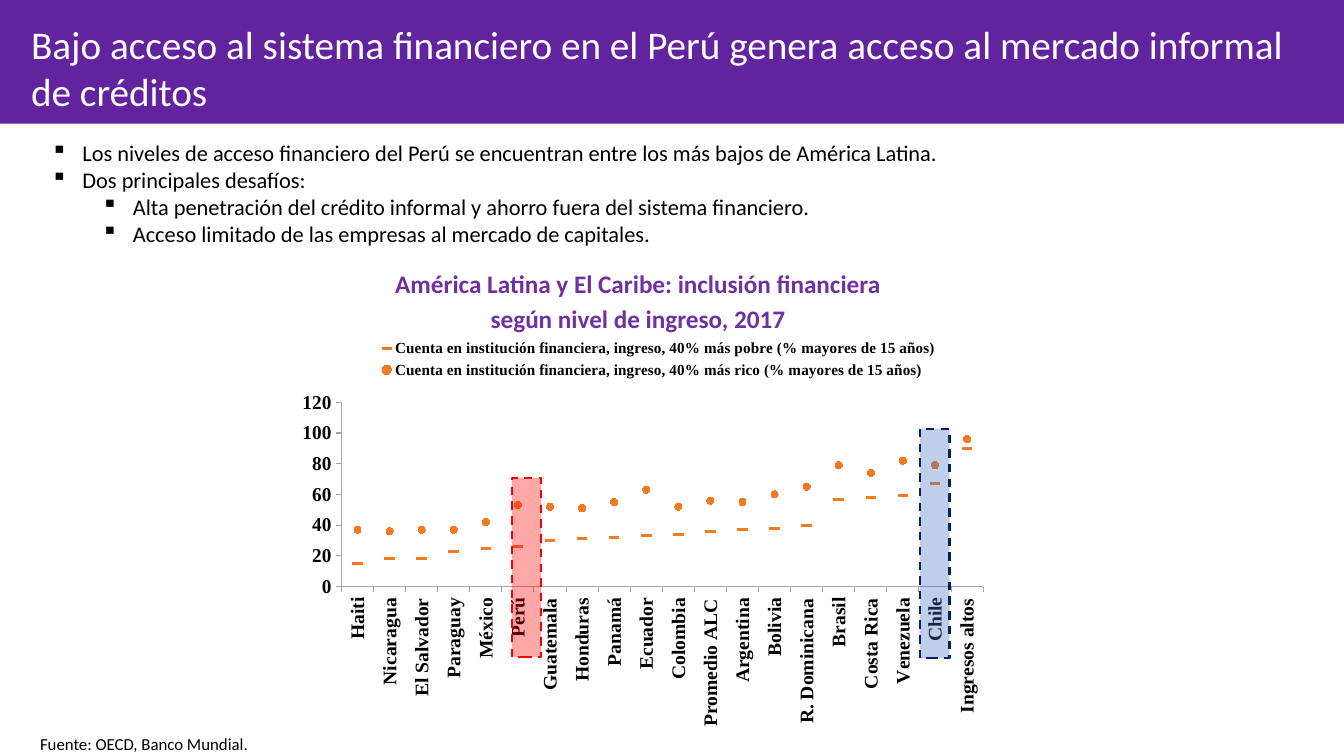
"""Build the slide on access to the financial system in Peru."""
from dataclasses import dataclass

import pptx
import pptx.chart.data
import pptx.dml.color
import pptx.enum.chart
import pptx.enum.dml
import pptx.enum.shapes
import pptx.enum.text
import pptx.oxml
import pptx.oxml.ns
import pptx.util

Cm = pptx.util.Cm
Pt = pptx.util.Pt
RGB = pptx.dml.color.RGBColor
Align = pptx.enum.text.PP_ALIGN
Mark = pptx.enum.chart.XL_MARKER_STYLE
qn = pptx.oxml.ns.qn

PURPLE = RGB(0x62, 0x23, 0x9F)
VIOLET = RGB(0x70, 0x30, 0xA0)
WHITE = RGB(0xFF, 0xFF, 0xFF)
BLACK = RGB(0, 0, 0)
GRAY = RGB(0xA6, 0xA6, 0xA6)
ORANGE = RGB(0xF4, 0x79, 0x20)
RED = RGB(0xFF, 0, 0)
BLUE = RGB(0x44, 0x72, 0xC4)
NAVY = RGB(0, 0x20, 0x60)
SANS = "Calibri"
SERIF = "Times New Roman"


@dataclass
class Box:
    left: float
    top: float
    width: float
    height: float

    def cm(self) -> tuple:
        return Cm(self.left), Cm(self.top), Cm(self.width), Cm(self.height)


@dataclass
class Label:
    text: str
    box: Box
    size: int
    color: RGB
    bold: bool
    align: Align
    spacing: float


@dataclass
class Point:
    text: str
    level: int


@dataclass
class Series:
    name: str
    values: tuple
    style: Mark
    size: int


@dataclass
class Focus:
    box: Box
    fill: RGB
    line: RGB


POINTS = (
    Point("Los niveles de acceso financiero del Perú se encuentran entre los más bajos de América Latina.", 0),
    Point("Dos principales desafíos:", 0),
    Point("Alta penetración del crédito informal y ahorro fuera del sistema financiero.", 1),
    Point("Acceso limitado de las empresas al mercado de capitales.", 1),
)
LABELS = (
    Label("Fuente: OECD, Banco Mundial.", Box(0.76, 18.11, 16.94, 0.94), 12, BLACK, False, Align.JUSTIFY, 1.5),
    Label("América Latina y El Caribe: inclusión financiera según nivel de ingreso, 2017",
          Box(8.97, 6.53, 14.22, 1.98), 18, VIOLET, True, Align.CENTER, 1.15),
)
LANDS = ("Haiti", "Nicaragua", "El Salvador", "Paraguay", "México", "Perú", "Guatemala",
         "Honduras", "Panamá", "Ecuador", "Colombia", "Promedio ALC", "Argentina", "Bolivia",
         "R. Dominicana", "Brasil", "Costa Rica", "Venezuela", "Chile", "Ingresos altos")
SERIES = (
    Series("Cuenta en institución financiera, ingreso, 40% más pobre (% mayores de 15 años)",
           (15, 18, 18, 23, 25, 26, 30, 31, 32, 33, 34, 36, 37, 38, 40, 57, 58, 59, 67, 90), Mark.DASH, 7),
    Series("Cuenta en institución financiera, ingreso, 40% más rico (% mayores de 15 años)",
           (37, 36, 37, 37, 42, 53, 52, 51, 55, 63, 52, 56, 55, 60, 65, 79, 74, 82, 79, 96), Mark.CIRCLE, 5),
)
FOCI = (
    Focus(Box(12.9, 12.04, 0.74, 4.52), RED, RED),
    Focus(Box(23.19, 10.8, 0.74, 5.79), BLUE, NAVY),
)


def style(font, name: str, size: int, color: RGB, bold: bool) -> None:
    """Set the look of a font."""
    font.name, font.size, font.bold = name, Pt(size), bold
    font.color.rgb = color


def add_rect(slide, box: Box, color: RGB):
    """Add a flat rectangle with no outline."""
    rect = slide.shapes.add_shape(pptx.enum.shapes.MSO_SHAPE.RECTANGLE, *box.cm())
    rect.shadow.inherit = False
    rect.fill.solid()
    rect.fill.fore_color.rgb = color
    rect.line.fill.background()
    return rect


def add_title(slide) -> None:
    """Set the title on its purple band."""
    title = slide.shapes.title
    title.left, title.top, title.width, title.height = Box(0.53, 0.38, 32.89, 2.64).cm()
    frame = title.text_frame
    frame.text = "Bajo acceso al sistema financiero en el Perú genera acceso al mercado informal de créditos"
    frame.word_wrap = True
    frame.auto_size = pptx.enum.text.MSO_AUTO_SIZE.NONE
    frame.vertical_anchor = pptx.enum.text.MSO_ANCHOR.TOP
    head = frame.paragraphs[0]
    head.alignment = Align.LEFT
    style(head.font, SANS, 28, WHITE, False)
    band = add_rect(slide, Box(0, 0, 33.87, 3.12), PURPLE)
    title.element.addprevious(band.element)


def add_points(slide, points: tuple[Point, ...]) -> None:
    """Add the bulleted list."""
    frame = slide.shapes.add_textbox(*Box(1.04, 3.38, 31.42, 3).cm()).text_frame
    frame.word_wrap = True
    for i, point in enumerate(points):
        para = frame.add_paragraph() if i else frame.paragraphs[0]
        para.text, para.level = point.text, point.level
        props = para._p.get_or_add_pPr()
        props.set("marL", str(Cm(0.79 + 1.27 * point.level)))
        props.set("indent", str(-Cm(0.79)))
        pptx.oxml.ns.qn
        props.append(props.makeelement(qn("a:buChar"), {"char": "▪"}))
        style(para.font, SANS, 16, BLACK, False)


def add_label(slide, label: Label) -> None:
    """Add a one-paragraph text box."""
    frame = slide.shapes.add_textbox(*label.box.cm()).text_frame
    frame.word_wrap = True
    para = frame.paragraphs[0]
    para.text, para.alignment = label.text, label.align
    para.line_spacing, para.space_after = label.spacing, Pt(8)
    style(para.font, SANS, label.size, label.color, label.bold)


def place(part, index: int, box: Box, inner: bool) -> None:
    """Give a chart part a manual layout in shares of the chart."""
    for old in part.findall(qn("c:layout")):
        part.remove(old)
    layout = part.makeelement(qn("c:layout"), {})
    manual = layout.makeelement(qn("c:manualLayout"), {})
    layout.append(manual)
    pairs = [("layoutTarget", "inner")] if inner else []
    pairs += [("xMode", "edge"), ("yMode", "edge"), ("x", box.left), ("y", box.top),
              ("w", box.width), ("h", box.height)]
    for tag, value in pairs:
        manual.append(manual.makeelement(qn("c:" + tag), {"val": str(value)}))
    part.insert(index, layout)


def add_graph(slide, series: tuple[Series, ...]) -> None:
    """Add the marker chart of account holders by country."""
    data = pptx.chart.data.CategoryChartData()
    data.categories = LANDS
    for item in series:
        data.add_series(item.name, item.values)
    kind = pptx.enum.chart.XL_CHART_TYPE.LINE_MARKERS
    chart = slide.shapes.add_chart(kind, *Box(7.62, 8.46, 17.17, 9.88).cm(), data).chart
    chart.has_title = False
    style(chart.font, SERIF, 14, BLACK, True)
    chart.plots[0].vary_by_categories = False
    for item, line in zip(series, chart.plots[0].series):
        line.smooth = False
        line.format.line.fill.background()
        mark = line.marker
        mark.style, mark.size = item.style, item.size
        mark.format.fill.solid()
        mark.format.fill.fore_color.rgb = ORANGE
        mark.format.line.fill.background()
    lands, scale = chart.category_axis, chart.value_axis
    for axis in (lands, scale):
        axis.has_major_gridlines = False
        axis.major_tick_mark = pptx.enum.chart.XL_TICK_MARK.OUTSIDE
        axis.format.line.color.rgb = GRAY
        axis.format.line.width = Pt(0.75)
        style(axis.tick_labels.font, SERIF, 14, BLACK, True)
    lands.tick_label_position = pptx.enum.chart.XL_TICK_LABEL_POSITION.LOW
    lands._element.find(qn("c:txPr")).find(qn("a:bodyPr")).set("rot", "-5400000")
    scale.minimum_scale, scale.maximum_scale, scale.major_unit = 0, 120, 20
    chart.has_legend = True
    legend = chart.legend
    legend.position = pptx.enum.chart.XL_LEGEND_POSITION.RIGHT
    legend.include_in_layout = True
    style(legend.font, SERIF, 11, BLACK, True)
    place(legend._element, 1, Box(0.09, 0, 0.85, 0.12), False)
    place(chart.element.find(".//" + qn("c:plotArea")), 0, Box(0.04, 0.17, 0.96, 0.47), True)


def add_focus(slide, focus: Focus) -> None:
    """Add a see-through dashed frame over a country."""
    rect = add_rect(slide, focus.box, focus.fill)
    color = rect.element.spPr.find(".//" + qn("a:srgbClr"))
    color.append(color.makeelement(qn("a:alpha"), {"val": "34000"}))
    rect.line.color.rgb = focus.line
    rect.line.width = Pt(1.5)
    rect.line.dash_style = pptx.enum.dml.MSO_LINE.DASH


def main() -> None:
    """Build and save the slide."""
    deck = pptx.Presentation()
    deck.slide_width, deck.slide_height = Cm(33.87), Cm(19.05)
    slide = deck.slides.add_slide(deck.slide_layouts[5])
    add_title(slide)
    add_points(slide, POINTS)
    add_graph(slide, SERIES)
    for label in LABELS:
        add_label(slide, label)
    for focus in FOCI:
        add_focus(slide, focus)
    deck.save("out.pptx")


if __name__ == "__main__":
    main()
